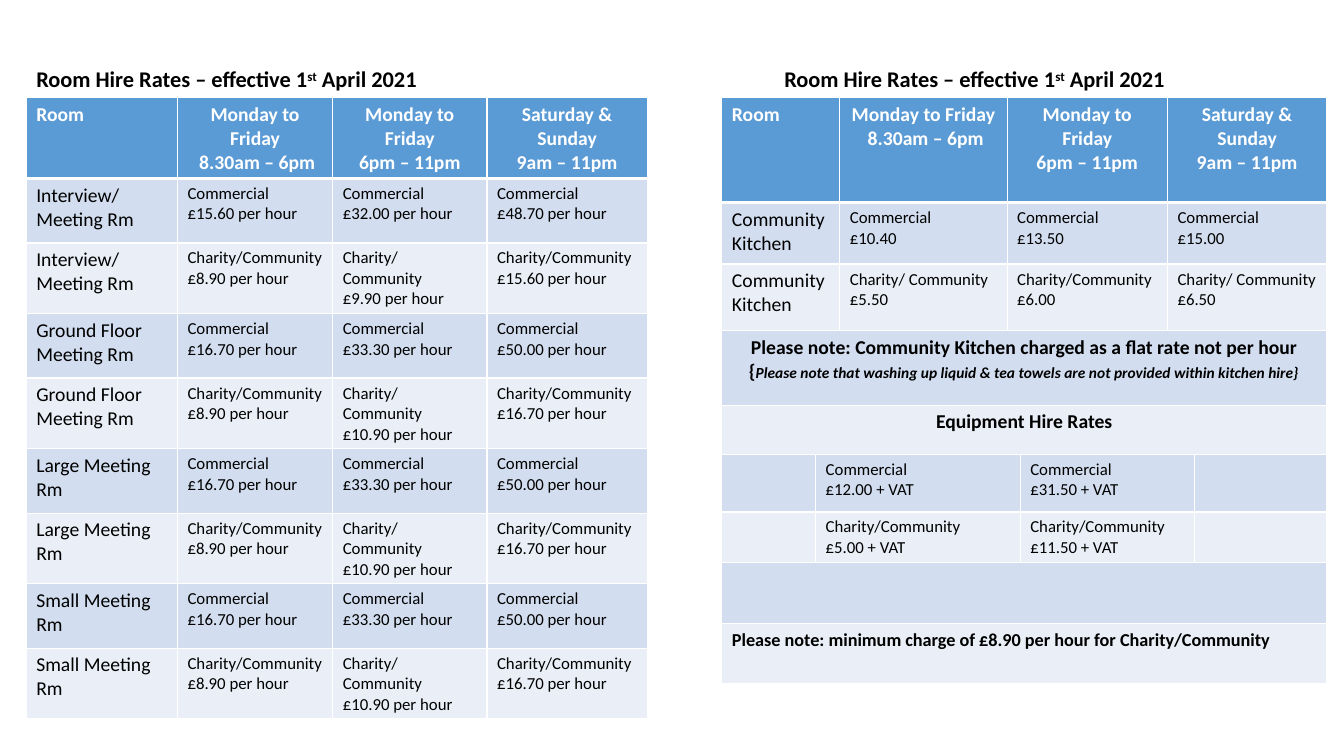
import pptx
import pptx.dml.color
import pptx.enum.text
import pptx.oxml
import pptx.oxml.ns
import pptx.util
from pptx.util import Inches

COLORS = {"header": "5B9BD5", "odd": "D2DEEF", "even": "EAEFF7",
          "white": "FFFFFF", "black": "000000"}
# Each text style: size, bold, colour, centred
STYLES = {
    "heading": (16, True, "black", False),
    "header": (14, True, "white", False),
    "hours": (14, True, "white", True),
    "room": (14, False, "black", False),
    "rate": (12, False, "black", False),
    "banner": (14, True, "black", True),
    "footnote": (13, True, "black", False),
}
HEADING = (("Room Hire Rates – effective 1", False), ("st", True), (" April 2021", False))
HOURS = ("Monday to Friday\n 8.30am – 6pm", "Monday to Friday\n6pm – 11pm",
         "Saturday & Sunday\n9am – 11pm")
MEETING_RATES = (
    ("Interview/ Meeting Rm", ("15.60", "32.00", "48.70"), ("8.90", "9.90", "15.60")),
    ("Ground Floor Meeting Rm", ("16.70", "33.30", "50.00"), ("8.90", "10.90", "16.70")),
    ("Large Meeting Rm", ("16.70", "33.30", "50.00"), ("8.90", "10.90", "16.70")),
    ("Small Meeting Rm", ("16.70", "33.30", "50.00"), ("8.90", "10.90", "16.70")),
)
WASHING_UP_NOTE = "Please note that washing up liquid & tea towels are not provided within kitchen hire}"


def row_of(first, others, first_style="room", other_style="rate", spans=(1, 1, 1, 1)):
    """Return a table row as (text, style, column span) cells."""
    styles = [first_style] + [other_style] * len(others)
    return list(zip([first, *others], styles, spans))


class RateSheet:
    def __init__(self, presentation):
        self.font_name = "Calibri"
        self.slide = presentation.slides.add_slide(presentation.slide_layouts[5])

    def color(self, name):
        return pptx.dml.color.RGBColor.from_string(COLORS[name])

    def style_paragraph(self, paragraph, style):
        size, bold, color, centred = STYLES[style]
        align = pptx.enum.text.PP_ALIGN
        paragraph.alignment = align.CENTER if centred else align.LEFT
        font = paragraph.font
        font.name, font.size, font.bold = self.font_name, pptx.util.Pt(size), bold
        font.color.rgb = self.color(color)

    def fill_heading(self, shape, left, top, width, height):
        shape.left, shape.top = Inches(left), Inches(top)
        shape.width, shape.height = Inches(width), Inches(height)
        frame = shape.text_frame
        frame.word_wrap = True
        frame.auto_size = pptx.enum.text.MSO_AUTO_SIZE.SHAPE_TO_FIT_TEXT
        frame.vertical_anchor = pptx.enum.text.MSO_ANCHOR.TOP
        paragraph = frame.paragraphs[0]
        self.style_paragraph(paragraph, "heading")
        for text, raised in HEADING:
            run = paragraph.add_run()
            run.text = text
            if raised:
                run._r.get_or_add_rPr().set("baseline", "30000")

    def title(self, *box):
        self.fill_heading(self.slide.shapes.title, *box)

    def heading(self, *box):
        self.fill_heading(self.slide.shapes.add_textbox(0, 0, 0, 0), *box)

    def cell_borders(self, cell, top, bottom):
        """Draw white cell borders; top and bottom are widths in points."""
        properties = cell._tc.get_or_add_tcPr()
        for index, (side, width) in enumerate(
                (("L", 1), ("R", 1), ("T", top), ("B", bottom))):
            properties.insert(index, pptx.oxml.parse_xml(
                f'<a:ln{side} {pptx.oxml.ns.nsdecls("a")} w="{pptx.util.Pt(width)}">'
                f'<a:solidFill><a:srgbClr val="{COLORS["white"]}"/></a:solidFill></a:ln{side}>'))

    def fill_cell(self, cell, text, style):
        cell.text = text
        for paragraph in cell.text_frame.paragraphs:
            self.style_paragraph(paragraph, style)

    def table(self, left, top, widths, heights, rows):
        grid = self.slide.shapes.add_table(
            len(heights), len(widths), Inches(left), Inches(top),
            Inches(sum(widths)), Inches(sum(heights))).table
        for column, width in zip(grid.columns, widths):
            column.width = Inches(width)
        for index, (row, height) in enumerate(zip(rows, heights)):
            grid.rows[index].height = Inches(height)
            band = "header" if index == 0 else "odd" if index % 2 else "even"
            for cell in grid.rows[index].cells:
                cell.fill.solid()
                cell.fill.fore_color.rgb = self.color(band)
                self.cell_borders(cell, 3 if index == 1 else 1, 3 if index == 0 else 1)
            column = 0
            for text, style, span in row:
                cell = grid.cell(index, column)
                if span > 1:
                    cell.merge(grid.cell(index, column + span - 1))
                if text:
                    self.fill_cell(cell, text, style)
                column += span
        return grid


def meeting_rows():
    rows = [row_of("Room", HOURS, "header", "hours")]
    for room, commercial, charity in MEETING_RATES:
        for customer, prices in (("Commercial", commercial), ("Charity/Community", charity)):
            rows.append(row_of(room, [f"{customer}\n£{price} per hour" for price in prices]))
    return rows


def kitchen_rows():
    kitchen_spans, equipment_spans = (2, 1, 2, 2), (1, 3, 2, 1)
    return [
        row_of("Room", HOURS, "header", "hours", kitchen_spans),
        row_of("Community Kitchen",
               ["Commercial\n£10.40", "Commercial\n£13.50", "Commercial\n£15.00"],
               spans=kitchen_spans),
        row_of("Community Kitchen",
               ["Charity/ Community\n£5.50", "Charity/Community\n£6.00",
                "Charity/ Community\n£6.50"], spans=kitchen_spans),
        [("Please note: Community Kitchen charged as a flat rate not per hour {", "banner", 7)],
        [("Equipment Hire Rates", "banner", 7)],
        row_of("", ["Commercial\n£12.00 + VAT", "Commercial\n£31.50 + VAT", ""],
               spans=equipment_spans),
        row_of("", ["Charity/Community\n£5.00 + VAT", "Charity/Community\n£11.50 + VAT", ""],
               spans=equipment_spans),
        [("", "rate", 7)],
        [("Please note: minimum charge of £8.90 per hour for Charity/Community", "footnote", 7)],
    ]


def main():
    presentation = pptx.Presentation()
    presentation.slide_width, presentation.slide_height = Inches(13.33), Inches(7.5)
    sheet = RateSheet(presentation)
    sheet.title(0.26, 0.6, 5.02, 0.37)
    sheet.table(0.26, 0.97, (1.5, 1.54, 1.53, 1.59), [0.8] + [0.64] * 8, meeting_rows())
    sheet.heading(7.68, 0.6, 5.02, 0.64)
    kitchen = sheet.table(7.16, 0.97, (0.93, 0.21, 1.66, 0.13, 1.46, 0.27, 1.31),
                          (1.04, 0.61, 0.66, 0.74, 0.49, 0.57, 0.49, 0.61, 0.59),
                          kitchen_rows())
    washing_up = kitchen.cell(3, 0).text_frame.paragraphs[0].add_run()
    washing_up.text = WASHING_UP_NOTE
    washing_up.font.size, washing_up.font.italic = pptx.util.Pt(11), True
    presentation.save("out.pptx")


if __name__ == "__main__":
    main()
